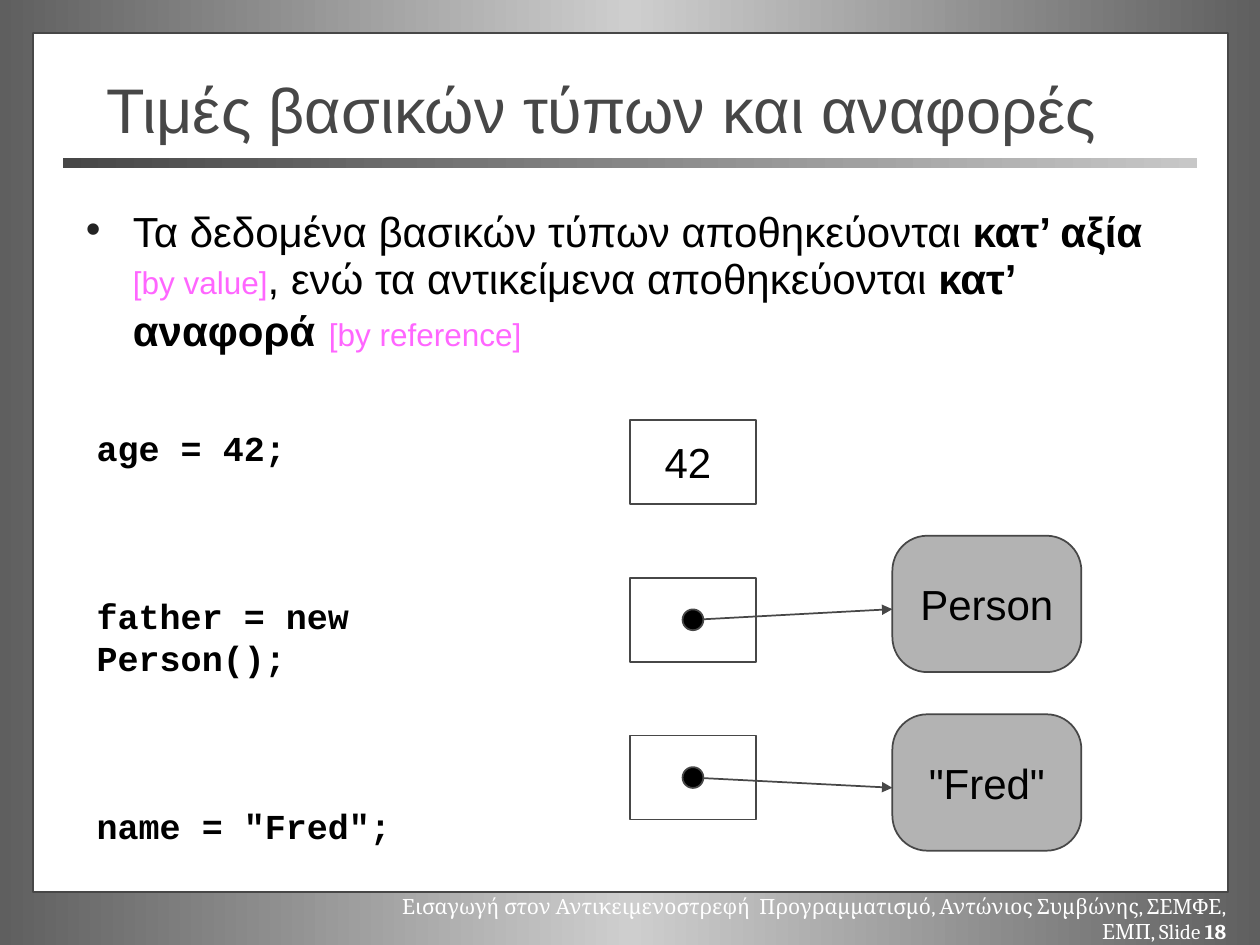
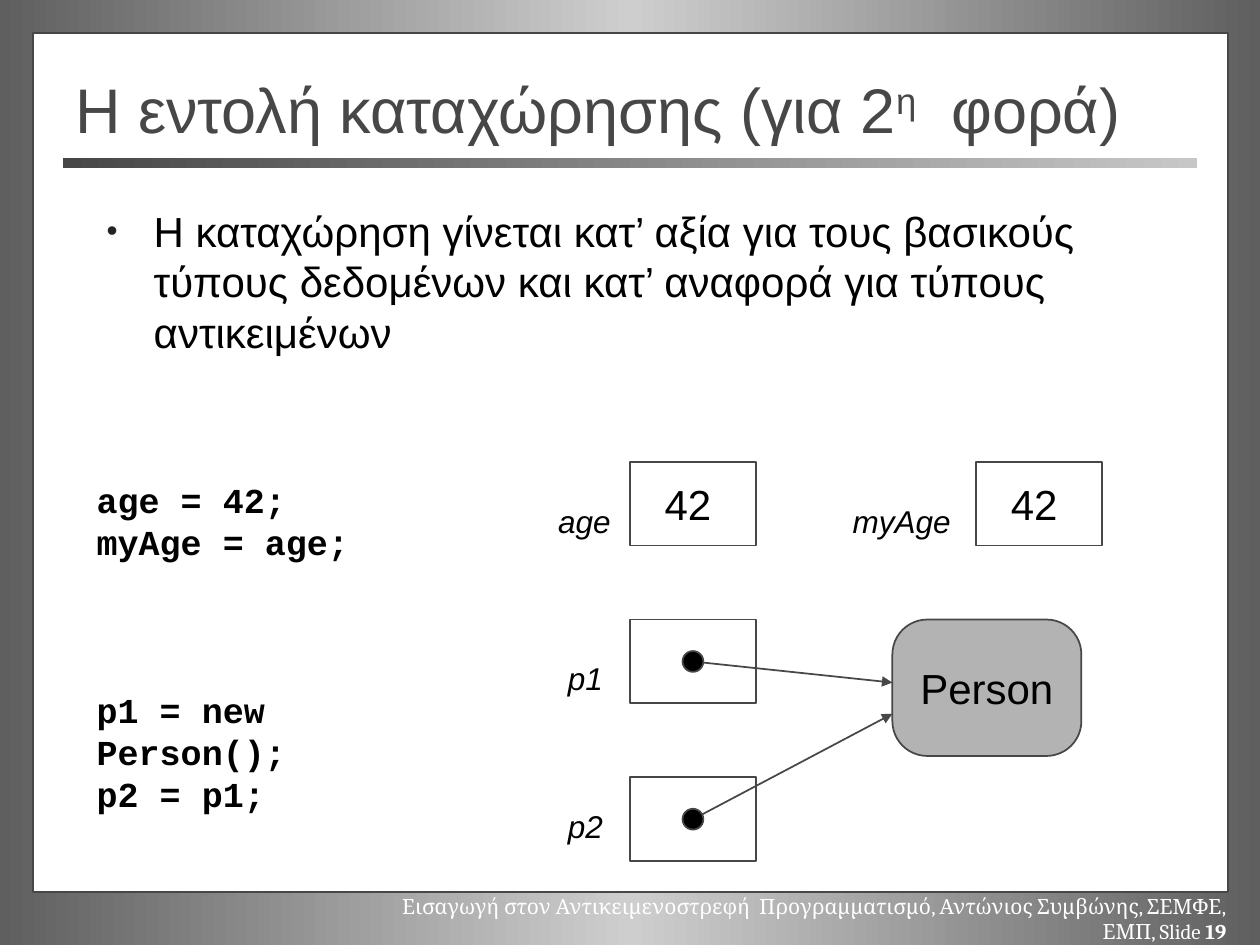
from lxml import etree
from pptx import Presentation
from pptx.dml.color import RGBColor
from pptx.enum.shapes import MSO_CONNECTOR, MSO_SHAPE
from pptx.enum.text import MSO_ANCHOR, PP_ALIGN
from pptx.oxml.ns import qn
from pptx.util import Cm, Pt

RECT, ROUND, OVAL = MSO_SHAPE.RECTANGLE, MSO_SHAPE.ROUNDED_RECTANGLE, MSO_SHAPE.OVAL
LINE = MSO_CONNECTOR.STRAIGHT
LEFT, MID, RIGHT = PP_ALIGN.LEFT, PP_ALIGN.CENTER, PP_ALIGN.RIGHT
TOP, CENTER = MSO_ANCHOR.TOP, MSO_ANCHOR.MIDDLE

HUES = {"ink": "000000", "paper": "FFFFFF", "gray": "474747", "pale": "C7C7C7",
        "edge": "5F5F5F", "glow": "CECECE", "object": "B3B3B3",
        "bullet": "232323", "term": "FF66FF"}

CELL_W, CELL_H, STEP = 2.54, 1.69, 3.18   # memory cells and their pitch
OBJ_X, OBJ_W, OBJ_H = 5.29, 3.81, 2.75    # object boxes, from the diagram's left
DOT = 0.42


def hue(name):
    return RGBColor.from_string(HUES[name])


def node(parent, tag, **attrs):
    return etree.SubElement(parent, qn(tag), attrs)


def blend(fill, root, *names):
    """Left-to-right gradient with evenly spaced stops."""
    fill.gradient()
    fill.gradient_angle = 0
    stops = root.find(".//" + qn("a:gsLst"))
    for stop in list(stops):
        stops.remove(stop)
    for i, name in enumerate(names):
        stop = node(stops, "a:gs", pos=str(100000 * i // (len(names) - 1)))
        node(stop, "a:srgbClr", val=HUES[name])


def write(frame, paras, size=24, font="Arial", color="ink", bold=False, italic=False,
          align=LEFT, anchor=TOP, lead=None, gaps=()):
    """Fill a frame; each paragraph is a string or a list of (text, format) runs."""
    frame.word_wrap = True
    frame.vertical_anchor = anchor
    for i, runs in enumerate(paras):
        para = frame.paragraphs[0] if i == 0 else frame.add_paragraph()
        para.alignment = align
        if lead:
            para.line_spacing = lead
        if gaps:
            para.space_before = Pt(gaps[i])
        for text, form in [(runs, {})] if isinstance(runs, str) else runs:
            run = para.add_run()
            run.text = text
            run.font.name = font
            run.font.size = Pt(form.get("size", size))
            run.font.bold = form.get("bold", bold)
            run.font.italic = italic
            run.font.color.rgb = hue(form.get("color", color))
            if "raise" in form:
                run.font._element.set("baseline", str(form["raise"] * 1000))


def label(slide, box, paras, **form):
    frame = slide.shapes.add_textbox(*map(Cm, box)).text_frame
    write(frame, paras, **form)
    return frame


def block(slide, kind, box, fill=None, line="gray"):
    shape = slide.shapes.add_shape(kind, *map(Cm, box))
    shape.shadow.inherit = False
    if fill:
        shape.fill.solid()
        shape.fill.fore_color.rgb = hue(fill)
    else:
        shape.fill.background()
    if line:
        shape.line.color.rgb = hue(line)
        shape.line.width = Pt(1)
    else:
        shape.line.fill.background()
    return shape


# Shared parts: backdrop, page, footer, title and rule
def base(deck, title, left, number):
    slide = deck.slides.add_slide(deck.slide_layouts[6])
    blend(slide.background.fill, slide.element, "edge", "glow", "edge")
    block(slide, RECT, (0.66, 0.66, 24.1, 17.32), "paper")
    text = "Εισαγωγή στον Αντικειμενοστρεφή  Προγραμματισμό, Αντώνιος Συμβώνης, ΣΕΜΦΕ, ΕΜΠ, Slide "
    label(slide, (7.09, 17.88, 17.88, 0.76), [[(text, {}), (str(number), {"bold": True})]],
          size=12, font="Cambria", color="paper", align=RIGHT)
    bar = block(slide, RECT, (1.27, 3.18, 22.86, 0.2), line=None)
    blend(bar.fill, bar._element, "gray", "pale")
    label(slide, (left, 1.4, 22.23, 1.57), [title], size=36, color="gray", anchor=CENTER)
    return slide


# Bulleted statement
def point(slide, box, runs, lead=None, scale=100):
    frame = label(slide, box, [runs], lead=lead, gaps=[5])
    props = frame.paragraphs[0]._p.get_or_add_pPr()
    props.set("marL", str(Cm(0.95)))
    props.set("indent", str(Cm(-0.95)))
    node(node(props, "a:buClr"), "a:srgbClr", val=HUES["bullet"])
    node(props, "a:buSzPct", val=str(scale * 1000))
    node(props, "a:buFont", typeface="Arial")
    node(props, "a:buChar", char="•")


# Code listing
def code(slide, top, lines, gaps):
    label(slide, (1.7, top, 7.62, 6.2), lines, size=20, font="Courier New",
          bold=True, lead=Pt(24), gaps=gaps)


# Memory diagram parts, relative to the diagram's top left corner
def cell(slide, org, x, y, value=None):
    x, y = org[0] + x, org[1] + y
    block(slide, RECT, (x, y, CELL_W, CELL_H))
    if value:
        label(slide, (x + 0.45, y + 0.21, 1.6, 1.27), [value])


def thing(slide, org, y, name):
    shape = block(slide, ROUND, (org[0] + OBJ_X, org[1] + y, OBJ_W, OBJ_H), "object")
    shape.adjustments[0] = 0.256
    write(shape.text_frame, [name], align=MID, anchor=CENTER)


def link(slide, org, row, end):
    """Reference arrow from the middle of a cell to the left side of an object."""
    x, y = org[0] + CELL_W / 2, org[1] + row * STEP + CELL_H / 2
    line = slide.shapes.add_connector(LINE, Cm(x), Cm(y), Cm(org[0] + OBJ_X), Cm(org[1] + end))
    line.line.color.rgb = hue("gray")
    line.line.width = Pt(1)
    node(line.line._get_or_add_ln(), "a:tailEnd", type="triangle")
    node(line._element.spPr, "a:effectLst")
    block(slide, OVAL, (x - DOT / 2, y - DOT / 2, DOT, DOT), "ink")


def diagram(slide, org, things, links):
    for row in range(3):
        cell(slide, org, 0, row * STEP, None if row else "42")
    for y, name in things:
        thing(slide, org, y, name)
    for row, end in links:
        link(slide, org, row, end)


def values(deck):
    slide = base(deck, "Τιμές βασικών τύπων και αναφορές", 1.9, 18)
    strong, term, wide = {"bold": True}, {"size": 18, "color": "term"}, {"size": 28}
    point(slide, (1.48, 4.02, 22.23, 3.38), [
        ("Τα δεδομένα βασικών τύπων αποθηκεύονται ", {}), ("κατ’ αξία", strong),
        (" ", wide), ("[by value]", term),
        (", ενώ τα αντικείμενα αποθηκεύονται ", {}), ("κατ’ αναφορά", strong),
        (" ", wide), ("[by reference]", term)], lead=0.9)
    code(slide, 8.47, ["age = 42;", "father = new Person();", 'name = "Fred";'], (0, 72, 72))
    diagram(slide, (12.7, 8.47), [(2.33, "Person"), (5.93, '"Fred"')], [(1, 3.81), (2, 7.41)])


def assign(deck):
    title = [("Η εντολή καταχώρησης (για 2", {}), ("η", {"raise": 30}), ("  φορά)", {})]
    slide = base(deck, title, 1.27, 19)
    point(slide, (1.9, 4.02, 21.59, 4.45),
          "Η καταχώρηση γίνεται κατ’ αξία για τους βασικούς τύπους δεδομένων "
          "και κατ’ αναφορά για τύπους αντικειμένων", scale=75)
    code(slide, 9.53, ["age = 42;", "myAge = age;", "p1 = new Person();", "p2 = p1;"],
         (0, 0, 72, 0))
    org = (12.7, 9.31)
    diagram(slide, org, [(STEP, "Person")], [(1, 4.45), (2, 5.08)])
    cell(slide, org, 6.98, 0, "42")
    for x, y, name in ((-1.7, 0.69, "age"), (4.24, 0.69, "myAge"),
                       (-1.5, 3.86, "p1"), (-1.5, 6.83, "p2")):
        label(slide, (org[0] + x, org[1] + y, 2.7, 1.02), [name], size=18, italic=True)


def main():
    deck = Presentation()
    deck.slide_width, deck.slide_height = Cm(25.4), Cm(19.05)
    values(deck)
    assign(deck)
    deck.save("out.pptx")


if __name__ == "__main__":
    main()
